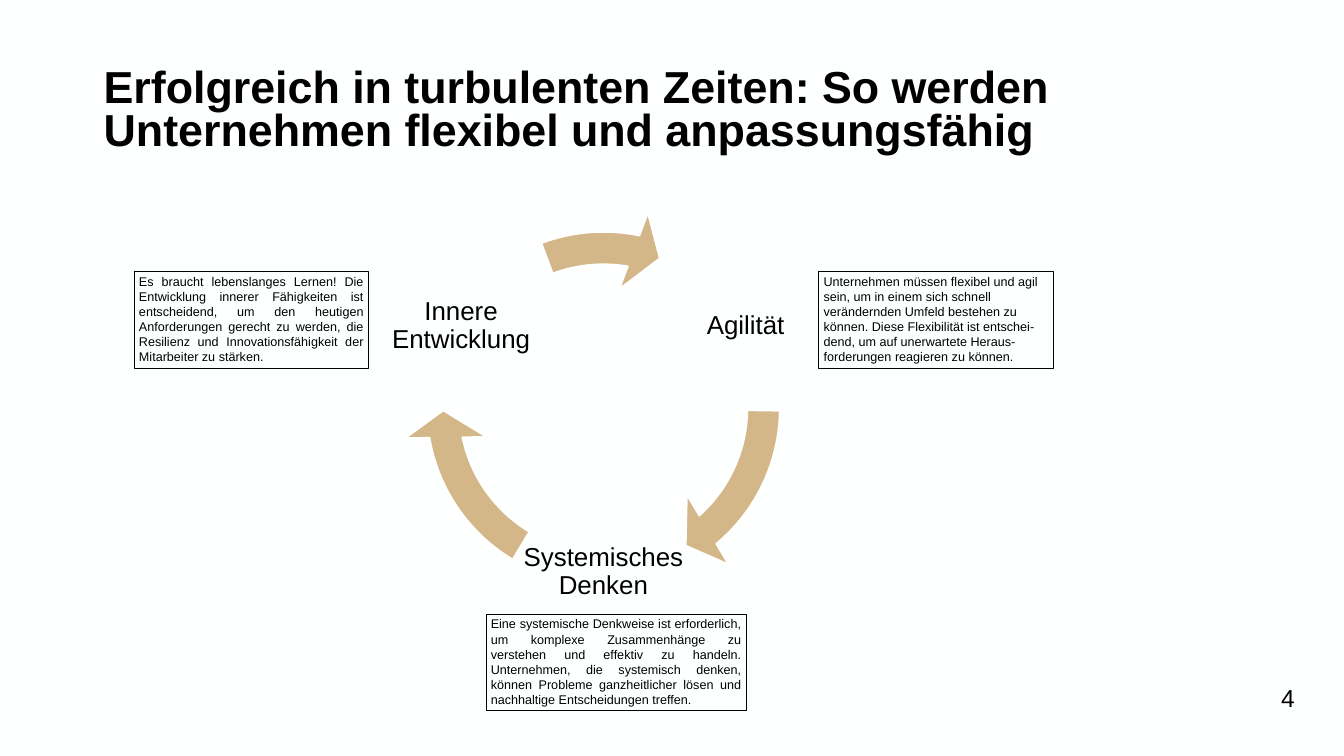
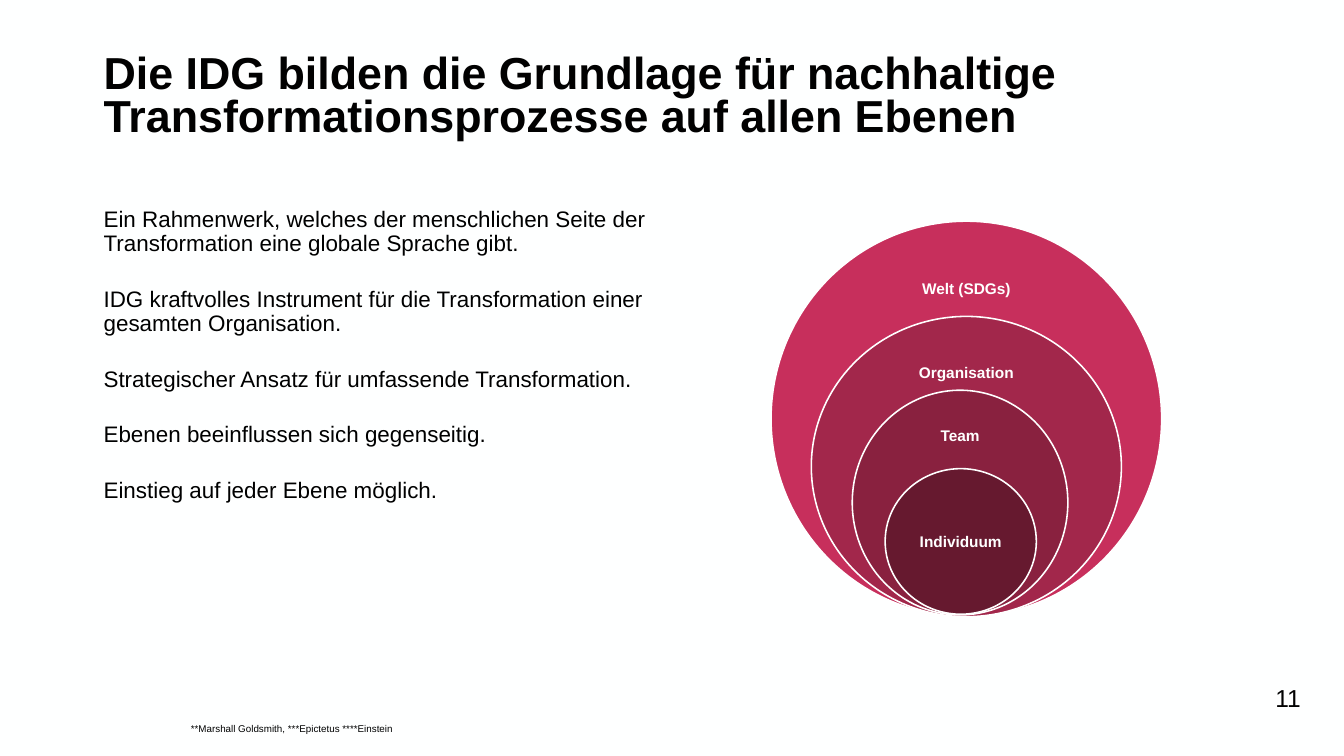
from math import cos, radians, sin

from lxml.etree import SubElement
from pptx import Presentation
from pptx.dml.color import RGBColor
from pptx.enum.shapes import MSO_SHAPE as Shape
from pptx.enum.text import MSO_ANCHOR as Anchor
from pptx.enum.text import MSO_AUTO_SIZE as AutoSize
from pptx.enum.text import PP_ALIGN as Align
from pptx.oxml.ns import qn
from pptx.util import Pt

FONT = "Arial"
BACKGROUND, BLACK, INK, WHITE = "FEFFFF", "000000", "010101", "FFFFFF"
SAND = "D4B789"
TITLE_LEFT = 144


def paint(shape, fill, line, width):
    """Set fill and outline and drop the shadow; a fill of None leaves the shape open."""
    shape.shadow.inherit = False
    if fill:
        shape.fill.solid()
        shape.fill.fore_color.rgb = RGBColor.from_string(fill)
    else:
        shape.fill.background()
    shape.line.color.rgb = RGBColor.from_string(line)
    shape.line.width = Pt(width)


def write(shape, text, size, color=BLACK, bold=False, align=Align.LEFT, anchor=Anchor.TOP,
          margin=None, spacing=None, grow=False):
    """Fill a shape with text, one paragraph per line, in one style."""
    frame = shape.text_frame
    frame.text = text
    frame.word_wrap = True
    frame.auto_size = AutoSize.SHAPE_TO_FIT_TEXT if grow else AutoSize.NONE
    frame.vertical_anchor = anchor
    if margin is not None:
        frame.margin_left = frame.margin_right = Pt(margin)
        frame.margin_top = frame.margin_bottom = Pt(margin)
    for para in frame.paragraphs:
        para.alignment = align
        if spacing:
            para.line_spacing = spacing
        for span in para.runs:
            span.font.name = FONT
            span.font.size = Pt(size)
            span.font.bold = bold
            span.font.color.rgb = RGBColor.from_string(color)


deck = Presentation()
deck.slide_width, deck.slide_height = Pt(1920), Pt(1080)
master_fill = deck.slide_master.background.fill
master_fill.solid()
master_fill.fore_color.rgb = RGBColor.from_string(BACKGROUND)

# Both slides: title and page number
headings = [
    # layout, title, top, width, anchor, page number
    (5, "Erfolgreich in turbulenten Zeiten: So werden Unternehmen flexibel und anpassungsfähig",
     82, 1580, Anchor.BOTTOM, "4"),
    (1, "Die IDG bilden die Grundlage für nachhaltige Transformationsprozesse auf allen Ebenen",
     74, 1557, Anchor.TOP, "11"),
]
for layout, heading, top, width, anchor, number in headings:
    slide = deck.slides.add_slide(deck.slide_layouts[layout])
    title = slide.shapes.title
    title.left, title.top, title.width, title.height = Pt(TITLE_LEFT), Pt(top), Pt(width), Pt(144)
    write(title, heading, 64, BLACK if layout == 5 else INK, bold=True, anchor=anchor,
          margin=4, spacing=0.8)
    page_number = slide.shapes.add_textbox(Pt(1788), Pt(964), Pt(104), Pt(65.5))
    write(page_number, number, 35, INK, align=Align.CENTER, anchor=Anchor.MIDDLE, grow=True)

cycle_slide, levels_slide = deck.slides

# Slide 1: cycle of three stages, each label followed by its arrow
CENTER_X, CENTER_Y = 862, 583.2
RING, LABEL, LABEL_RADIUS = 572, 242, 234.7
stages = [
    # label, label angle, arrow end, arrow start
    ("Agilität", -30, 29.63, 0.52),
    ("Systemisches Denken", 90, 101.72, 72.61),
    ("Innere Entwicklung", 210, 168.56, 149.68),
]
for name, angle, arrow_end, arrow_start in stages:
    x = CENTER_X + LABEL_RADIUS * cos(radians(angle))
    y = CENTER_Y + LABEL_RADIUS * sin(radians(angle))
    label = cycle_slide.shapes.add_textbox(Pt(x - LABEL / 2), Pt(y - LABEL / 2),
                                           Pt(LABEL), Pt(LABEL))
    write(label, name, 37, align=Align.CENTER, anchor=Anchor.MIDDLE, margin=3.6, spacing=0.9)
    arrow = cycle_slide.shapes.add_shape(Shape.CIRCULAR_ARROW, Pt(CENTER_X - RING / 2),
                                         Pt(CENTER_Y - RING / 2), Pt(RING), Pt(RING))
    for index, value in enumerate((0.08, 5.76, arrow_end, arrow_start, 0.1)):
        arrow.adjustments[index] = value
    paint(arrow, SAND, WHITE, 2)

explanations = [
    (694, 877, 372, Align.JUSTIFY,
     "Eine systemische Denkweise ist erforderlich, um komplexe Zusammenhänge zu verstehen und "
     "effektiv zu handeln. Unternehmen, die systemisch denken, können Probleme ganzheitlicher "
     "lösen und nachhaltige Entscheidungen treffen."),
    (191.5, 387.5, 335, Align.JUSTIFY,
     "Es braucht lebenslanges Lernen! Die Entwicklung innerer Fähigkeiten ist entscheidend, um "
     "den heutigen Anforderungen gerecht zu werden, die Resilienz und Innovationsfähigkeit der "
     "Mitarbeiter zu stärken."),
    (1169.5, 387.5, 335, Align.LEFT,
     "Unternehmen müssen flexibel und agil sein, um in einem sich schnell verändernden Umfeld "
     "bestehen zu können. Diese Flexibilität ist entschei-dend, um auf unerwartete "
     "Heraus-forderungen reagieren zu können."),
]
for left, top, width, align, explanation in explanations:
    box = cycle_slide.shapes.add_shape(Shape.RECTANGLE, Pt(left), Pt(top), Pt(width), Pt(138))
    paint(box, None, INK, 0.75)
    write(box, explanation, 18, align=align, grow=True)

# Slide 2: nested levels, from the outside in
levels = [
    ("Welt (SDGs)", "C72F5C", 1101.5, 316, 558, 564.5, Anchor.TOP),
    ("Organisation", "A2274B", 1159, 452, 443, 429, Anchor.TOP),
    ("Team", "84203D", 1217.5, 557.5, 308, 321, Anchor.TOP),
    ("Individuum", "66192F", 1264.5, 669.5, 216, 208, Anchor.MIDDLE),
]
for name, fill, left, top, width, height, anchor in levels:
    circle = levels_slide.shapes.add_shape(Shape.OVAL, Pt(left), Pt(top), Pt(width), Pt(height))
    paint(circle, fill, WHITE, 2.25)
    write(circle, name, 22, WHITE, bold=True, align=Align.CENTER, anchor=anchor)
    if name == "Welt (SDGs)":
        circle.text_frame.margin_top = 0
    if name == "Team":
        fill_color = circle.fill._xPr.find(qn("a:solidFill"))[0]
        SubElement(fill_color, qn("a:alpha")).set("val", "82000")

body = levels_slide.placeholders[1]
body.left, body.top, body.width, body.height = Pt(TITLE_LEFT), Pt(293), Pt(854), Pt(481)
statements = [
    "Ein Rahmenwerk, welches der menschlichen Seite der Transformation eine globale Sprache gibt.",
    "IDG kraftvolles Instrument für die Transformation einer gesamten Organisation.",
    "Strategischer Ansatz für umfassende Transformation.",
    "Ebenen beeinflussen sich gegenseitig.",
    "Einstieg auf jeder Ebene möglich.",
]
write(body, "\n".join(statements), 32, margin=4, spacing=0.9)
for index, para in enumerate(body.text_frame.paragraphs):
    para.space_before = Pt(45 if index else 0)
    properties = para._p.get_or_add_pPr()
    properties.set("marL", "0")
    properties.set("indent", "0")
    SubElement(properties, qn("a:buNone"))

footnote = levels_slide.shapes.add_textbox(Pt(265.5), Pt(1029), Pt(305.5), Pt(24.5))
write(footnote, "**Marshall Goldsmith, ***Epictetus ****Einstein", 14, grow=True)
footnote.text_frame.word_wrap = False

deck.save("out.pptx")
